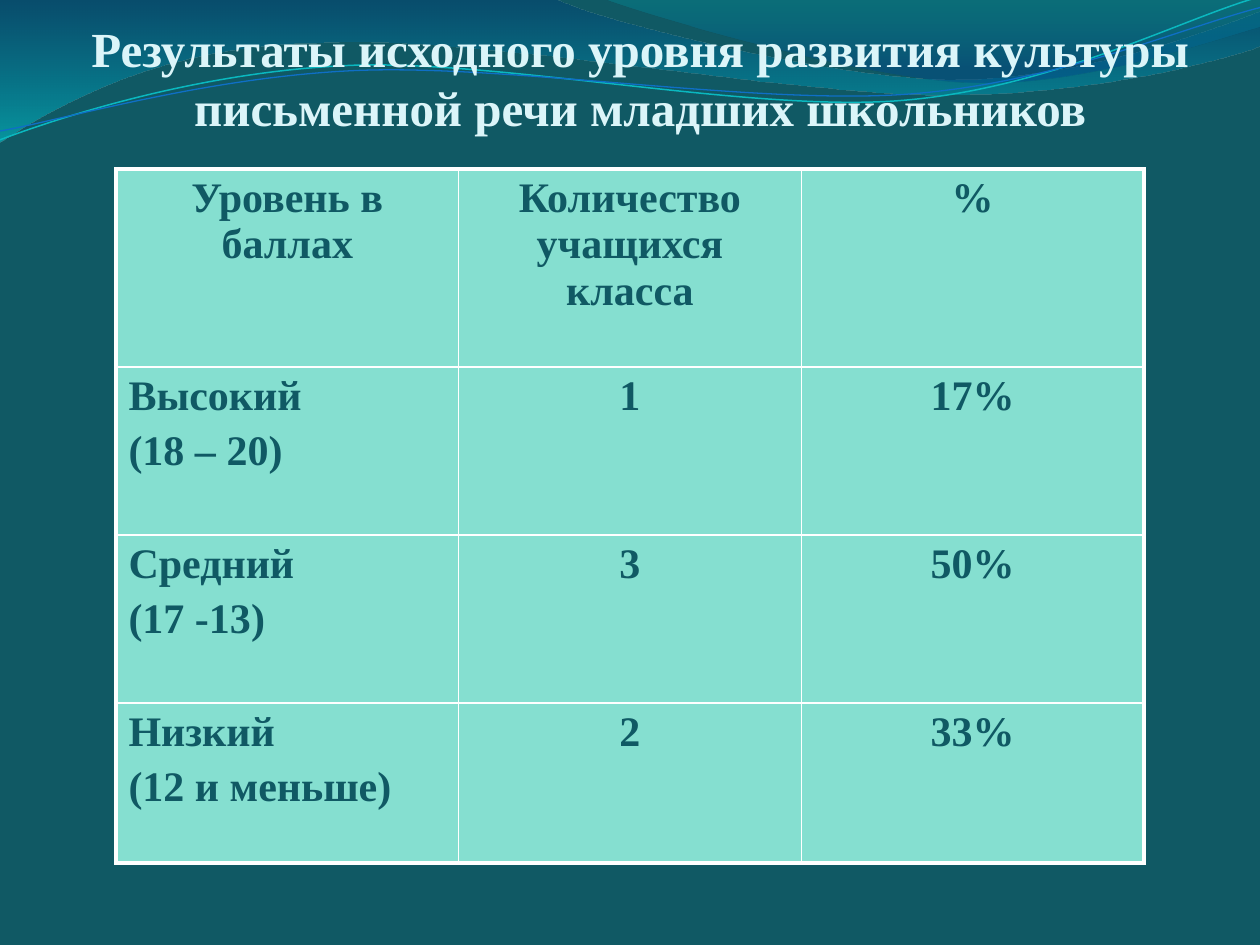
from lxml.etree import SubElement
from pptx import Presentation
from pptx.dml.color import RGBColor
from pptx.enum.text import MSO_ANCHOR, MSO_AUTO_SIZE, PP_ALIGN
from pptx.oxml.ns import qn
from pptx.util import Inches, Pt

WIDTH, HEIGHT = 10, 7.5
FONT = "Times New Roman"
DEEP, MINT, PALE, WHITE = "105964", "85DFD0", "DBF5F9", "FFFFFF"

TITLE = "Результаты исходного уровня развития культуры письменной речи младших школьников"
HEADER = ["Уровень в баллах", "Количество учащихся класса", "%"]
LEVELS = [
    ["Высокий\n(18 – 20)", "1", "17%"],
    ["Средний\n(17 -13)", "3", "50%"],
    ["Низкий\n(12 и меньше)", "2", "33%"],
]

# Each outline is a start point, then segments: 2 numbers a line, 6 a Bézier curve
LEFT_WAVE = [(0, -0.01), (4.4, -0.01), (4.76, 0.17, 6.64, 0.63, 7.58, 0.63),
             (8.53, 0.63, 9.58, 0.26, 10, 0.09), (10.01, 0.36),
             (9.83, 0.44, 8.7, 0.76, 7.46, 0.75), (6.22, 0.75, 3.82, 0.28, 2.57, 0.34),
             (1.29, 0.35, 0.46, 0.83, -0.01, 1.13), (0, -0.01)]
RIGHT_WAVE = [(4.79, -0.01), (5.09, 0.11, 6.82, 0.62, 7.69, 0.65),
              (8.56, 0.69, 9.61, 0.32, 10, 0.21), (10, 0), (4.79, -0.01)]
TEAL_STRAND = [(0, 1.11), (0.48, 0.93, 1.58, 0.57, 2.77, 0.52),
               (3.95, 0.47, 5.93, 0.89, 7.13, 0.8), (8.33, 0.71, 9.38, 0.15, 9.98, -0.02)]
BLUE_STRAND = [(0, 1.04), (0.47, 0.96, 1.64, 0.61, 2.83, 0.56),
               (4.03, 0.51, 5.97, 0.83, 7.17, 0.75), (8.36, 0.67, 9.41, 0.21, 10, 0.06)]


def color(hex_code):
    return RGBColor.from_string(hex_code)


def add_run(paragraph, text, size, hex_code):
    run = paragraph.add_run()
    run.text = text
    run.font.name = FONT
    run.font.size = Pt(size)
    run.font.bold = True
    run.font.color.rgb = color(hex_code)


def add_outline(slide, box, outline, close):
    """Join the segment ends by lines, then bend those that are curves."""
    left, top = box
    ends = [(Inches(left + segment[-2]), Inches(top + segment[-1])) for segment in outline]
    builder = slide.shapes.build_freeform(*ends[0])
    builder.add_line_segments(ends[1:], close=close)
    shape = builder.convert_to_shape()
    shape.shadow.inherit = False
    lines = list(shape._element.spPr.iter(qn("a:lnTo")))
    for line, segment in zip(lines, outline[1:]):
        if len(segment) == 2:
            continue
        line.tag = qn("a:cubicBezTo")
        for slot, i in enumerate((0, 2)):
            handle = SubElement(line, qn("a:pt"),
                                x=str(Inches(left + segment[i]) - shape.left),
                                y=str(Inches(top + segment[i + 1]) - shape.top))
            line.insert(slot, handle)
    return shape


def add_wave(slide, box, outline, stops):
    wave = add_outline(slide, box, outline, close=True)
    wave.line.fill.background()
    wave.fill.gradient()
    wave.fill.gradient_angle = 270
    for stop, (position, hex_code, _) in zip(wave.fill.gradient_stops, stops):
        stop.position = position
        stop.color.rgb = color(hex_code)
    # Opacity of each stop
    for tint, (_, _, opacity) in zip(wave._element.spPr.iter(qn("a:srgbClr")), stops):
        SubElement(tint, qn("a:alpha"), val=str(opacity * 1000))


def add_strand(slide, box, outline, hex_code, weight):
    strand = add_outline(slide, box, outline, close=False)
    strand.fill.background()
    strand.line.color.rgb = color(hex_code)
    strand.line.width = Pt(weight)


def add_backdrop(slide, box):
    slide.background.fill.solid()
    slide.background.fill.fore_color.rgb = color(DEEP)
    add_wave(slide, box, LEFT_WAVE, [(0, "003E76", 45), (1, "00C6CF", 55)])
    add_wave(slide, box, RIGHT_WAVE, [(0, "00A1A9", 30), (0.8, "004A8C", 45)])
    add_strand(slide, box, TEAL_STRAND, "0AB8BF", 0.85)
    add_strand(slide, box, BLUE_STRAND, "0F6FC6", 0.75)


def place_title(slide, box):
    title = slide.shapes.title
    title.left, title.top, title.width, title.height = map(Inches, box)
    slide.shapes._spTree.append(title._element)  # in front of the waves
    frame = title.text_frame
    frame.word_wrap = True
    frame.auto_size = MSO_AUTO_SIZE.NONE
    frame.vertical_anchor = MSO_ANCHOR.BOTTOM
    frame.margin_left = frame.margin_right = frame.margin_bottom = 0
    frame.margin_top = Inches(0.05)
    heading = frame.paragraphs[0]
    heading.alignment = PP_ALIGN.CENTER
    add_run(heading, TITLE, 28, PALE)


def set_borders(cell, outer_sides):
    """Thick borders on the table's edge, thin ones inside."""
    properties = cell._tc.get_or_add_tcPr()
    for side in ("lnL", "lnR", "lnT", "lnB"):
        weight = 2.25 if side in outer_sides else 1
        border = SubElement(properties, qn(f"a:{side}"), w=str(Pt(weight)))
        SubElement(SubElement(border, qn("a:solidFill")), qn("a:srgbClr"), val=WHITE)


def fill_cell(cell, text, centred):
    cell.fill.solid()
    cell.fill.fore_color.rgb = color(MINT)
    frame = cell.text_frame
    for index, line in enumerate(text.split("\n")):
        paragraph = frame.add_paragraph() if index else frame.paragraphs[0]
        paragraph.alignment = PP_ALIGN.CENTER if centred else PP_ALIGN.LEFT
        if index:
            paragraph.space_before = Pt(5)
        add_run(paragraph, line, 24, DEEP)


def add_results(slide, box, row_shares):
    left, top, width, height = map(Inches, box)
    rows = [HEADER] + LEVELS
    last_row, last_column = len(rows) - 1, len(HEADER) - 1
    table = slide.shapes.add_table(len(rows), len(HEADER), left, top, width, height).table
    for column in table.columns:
        column.width = width // len(HEADER)
    for r, texts in enumerate(rows):
        table.rows[r].height = int(height * row_shares[r] / sum(row_shares))
        for c, text in enumerate(texts):
            cell = table.cell(r, c)
            edges = {"lnL": c == 0, "lnR": c == last_column,
                     "lnT": r == 0, "lnB": r == last_row}
            set_borders(cell, [side for side, outer in edges.items() if outer])
            fill_cell(cell, text, centred=r == 0 or c > 0)


def main():
    deck = Presentation()
    deck.slide_width, deck.slide_height = Inches(WIDTH), Inches(HEIGHT)
    slide = deck.slides.add_slide(deck.slide_layouts.get_by_name("Title Only"))
    add_backdrop(slide, (0, 0))
    place_title(slide, (0.58, -0.42, WIDTH * 0.9, HEIGHT * 0.2))
    add_results(slide, (0.92, 1.34, 8.16, 5.51), [1.57, 1.33, 1.33, 1.27])
    deck.save("out.pptx")


if __name__ == "__main__":
    main()
